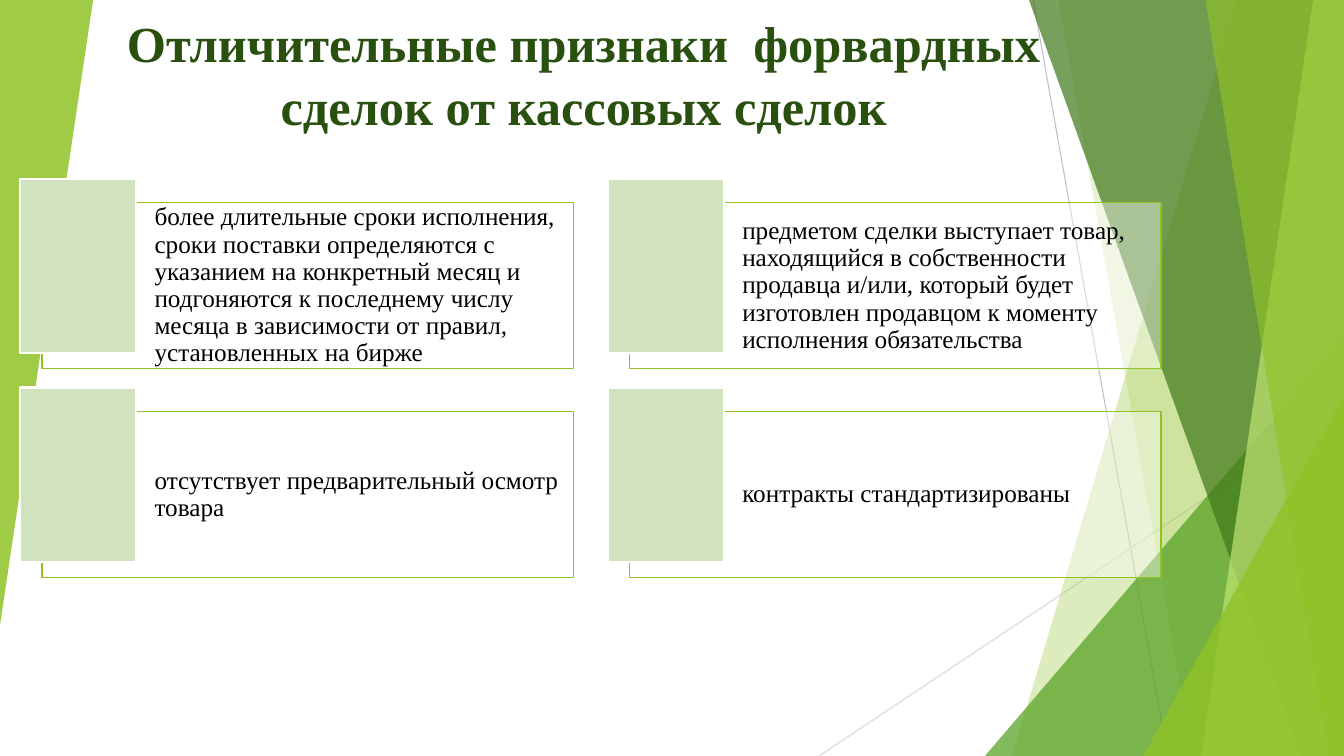
import pptx
import pptx.util
import pptx.dml.color
import pptx.enum.shapes
import pptx.enum.text
import pptx.oxml
import pptx.oxml.ns

Pt = pptx.util.Pt
MID = pptx.enum.text.MSO_ANCHOR.MIDDLE
LEFT, CENTER = pptx.enum.text.PP_ALIGN.LEFT, pptx.enum.text.PP_ALIGN.CENTER
KIND = pptx.enum.shapes.MSO_SHAPE
FONT = "Times New Roman"
W, H = 960, 540

# Content
HEAD = "Отличительные признаки  форвардных сделок от кассовых сделок"
CARDS = [
    "более длительные сроки исполнения, сроки поставки определяются с указанием "
    "на конкретный месяц и подгоняются к последнему числу месяца в зависимости "
    "от правил, установленных на бирже",
    "предметом сделки выступает товар, находящийся в собственности продавца "
    "и/или, который будет изготовлен продавцом к моменту исполнения обязательства",
    "отсутствует предварительный осмотр товара",
    "контракты стандартизированы",
]

# Backdrop, back to front
LINES = [(738, 0, 834, H, "BFBFBF"), (W, 290, 585, H, "D9D9D9")]
# band: top x, bottom x, colour, opacity; wedge: box, turn, colour, opacity
DECOR = [
    ("band", 884, 723, "90C226", 30),
    ("band", 756, 852, "90C226", 20),
    ("wedge", (703.5, 240, 256.5, 300), 0, "54A021", 72),
    ("band", 735, 929.5, "3F7819", 70),
    ("band", 938, 858, "C0E474", 70),
    ("band", 861, 949, "90C226", 65),
    ("wedge", (816.5, 283, 143.5, 257), 0, "90C226", 80),
    ("wedge", (0, 0, 66.5, 446.5), 180, "90C226", 85),
]


def rgb(code):
    return pptx.dml.color.RGBColor.from_string(code)


def paint(shape, fill, alpha=100, line=None, width=1):
    shape.shadow.inherit = False
    shape.fill.solid()
    shape.fill.fore_color.rgb = rgb(fill)
    if alpha < 100:
        tone = shape.fill._xPr.find(".//" + pptx.oxml.ns.qn("a:srgbClr"))
        tone.append(pptx.oxml.parse_xml(
            f'<a:alpha {pptx.oxml.ns.nsdecls("a")} val="{alpha * 1000}"/>'))
    if line:
        shape.line.color.rgb = rgb(line)
        shape.line.width = Pt(width)
    else:
        shape.line.fill.background()


def add(kind, *box):
    return slide.shapes.add_shape(kind, *map(Pt, box))


def write(shape, text, size, color, align, space, bold=False):
    shape.text_frame.text = text
    shape.text_frame.word_wrap = True
    par = shape.text_frame.paragraphs[0]
    par.alignment, par.line_spacing = align, space
    font = par.runs[0].font
    font.name, font.size, font.bold = FONT, Pt(size), bold
    font.color.rgb = rgb(color)


deck = pptx.Presentation()
deck.slide_width, deck.slide_height = Pt(W), Pt(H)
slide = deck.slides.add_slide(deck.slide_layouts[5])

# Thin lines
for x1, y1, x2, y2, color in LINES:
    line = slide.shapes.add_connector(
        pptx.enum.shapes.MSO_CONNECTOR.STRAIGHT, *map(Pt, (x1, y1, x2, y2)))
    line.line.color.rgb = rgb(color)
    line.line.width = Pt(0.75)
    line._element.spPr.append(pptx.oxml.parse_xml(
        f'<a:effectLst {pptx.oxml.ns.nsdecls("a")}/>'))

# Slanted bands and wedges
for kind, first, second, color, alpha in DECOR:
    if kind == "band":
        pen = slide.shapes.build_freeform(Pt(first), 0)
        pen.add_line_segments(
            [(Pt(W), 0), (Pt(W), Pt(H)), (Pt(second), Pt(H))], close=True)
        part = pen.convert_to_shape()
    else:
        part = add(KIND.ISOSCELES_TRIANGLE, *first)
        part.adjustments[0] = 1
        part.rotation = second
    paint(part, color, alpha)

# Title, brought in front of the backdrop
title = slide.shapes.title
title.left, title.top, title.width, title.height = map(Pt, (24.5, 12.2, 785, 88.6))
write(title, HEAD, 36, "2A5010", CENTER, 1.05, True)
title.text_frame.vertical_anchor = pptx.enum.text.MSO_ANCHOR.BOTTOM
title.text_frame.auto_size = pptx.enum.text.MSO_AUTO_SIZE.NONE
slide.shapes._spTree.append(title._element)

# Cards, two by two, each with a green tile at its corner
for i, text in enumerate(CARDS):
    row, col = divmod(i, 2)
    x, y = 30 + col * 419.8, 144.8 + row * 149.2
    card = add(KIND.RECTANGLE, x, y, 379.6, 118.6)
    paint(card, "FFFFFF", 40, "90C226")
    write(card, text, 18, "000000", LEFT, 0.9)
    frame = card.text_frame
    frame.vertical_anchor = MID
    frame.margin_left = Pt(80.4)
    frame.margin_right = frame.margin_top = frame.margin_bottom = Pt(5)
    tile = add(KIND.RECTANGLE, x - 15.8, y - 17.2, 83, 124.5)
    paint(tile, "D1E3BE", 100, "FFFFFF", 1.5)

deck.save("out.pptx")
